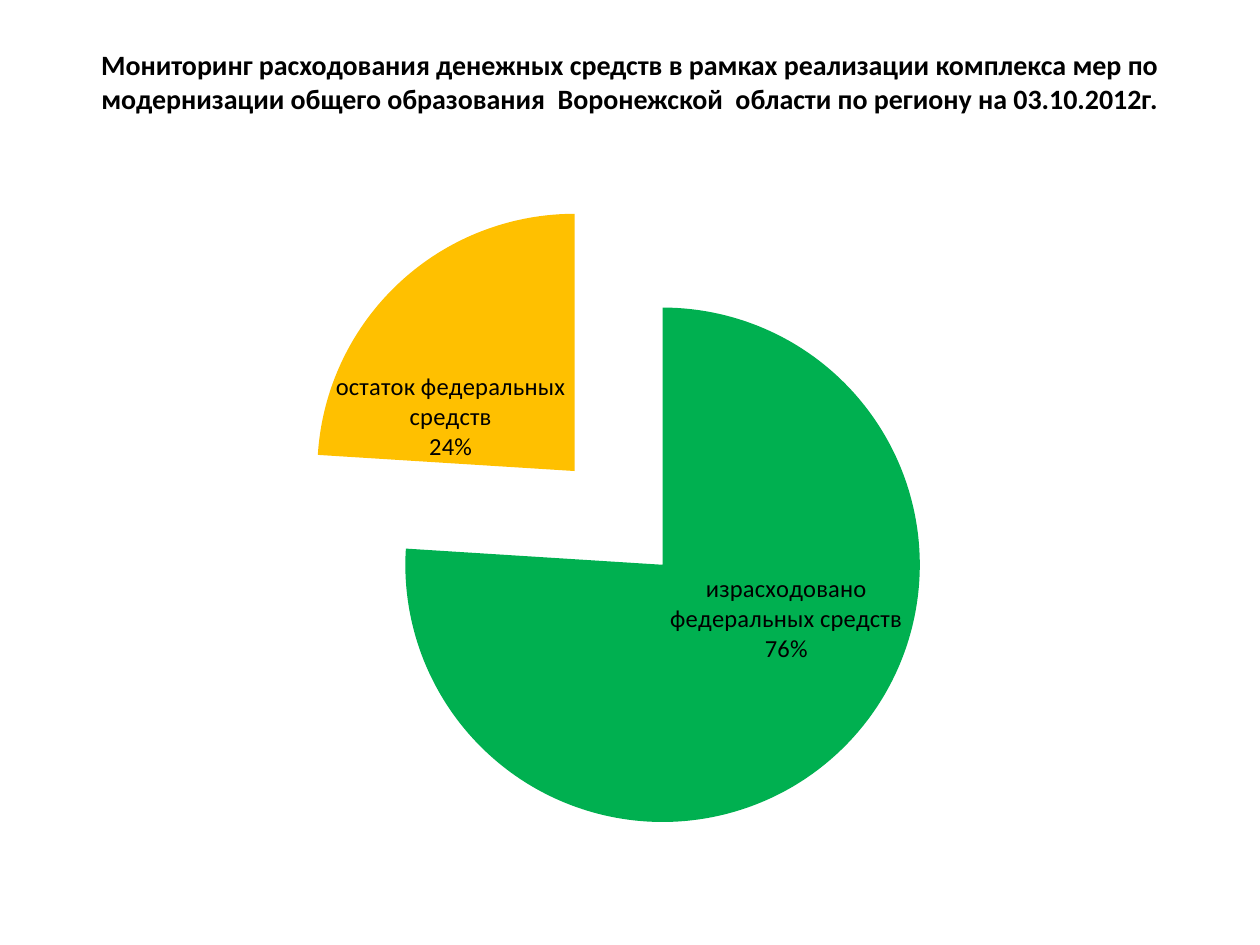
import pptx
import pptx.chart.data
import pptx.dml.color
import pptx.enum.chart
import pptx.enum.text
import pptx.oxml
import pptx.oxml.ns
import pptx.util

PX = 914400 // 126
WIDTH, HEIGHT = 1260, 945


class Theme:
    font = "Calibri"
    text = pptx.dml.color.RGBColor.from_string("000000")
    spent = pptx.dml.color.RGBColor.from_string("00B050")
    rest = pptx.dml.color.RGBColor.from_string("FFC000")
    title_size = pptx.util.Pt(16)
    chart_size = pptx.util.Pt(10)
    label_size = pptx.util.Pt(14)


def chart_xml(body):
    """Parse one chart element written with the c: prefix."""
    tag, rest = body[1:].split(" ", 1) if " " in body.split(">")[0] else body[1:].split(">", 1)
    gap = " " if " " in body.split(">")[0] else ">"
    ns = pptx.oxml.ns.nsdecls("c")
    return pptx.oxml.parse_xml(f"<{tag} {ns}{gap}{rest}")


def layout_xml(x, y, w=None, h=None):
    """Manual layout: an offset, or an inner plot area when a size is given."""
    items = []
    if w is not None:
        items += [("layoutTarget", "inner"), ("xMode", "edge"), ("yMode", "edge")]
    items += [("x", x), ("y", y)]
    if w is not None:
        items += [("w", w), ("h", h)]
    body = "".join(f'<c:{name} val="{value}"/>' for name, value in items)
    return chart_xml(f"<c:layout><c:manualLayout>{body}</c:manualLayout></c:layout>")


class Deck:
    def __init__(self, theme):
        self.theme = theme
        self.prs = pptx.Presentation()
        self.prs.slide_width = WIDTH * PX
        self.prs.slide_height = HEIGHT * PX
        self.slide = self.prs.slides.add_slide(self.prs.slide_layouts[6])

    def style(self, font, size, bold=False):
        font.name = self.theme.font
        font.size = size
        font.bold = bold
        font.color.rgb = self.theme.text

    def title(self, text, box):
        sp = self.slide.shapes.add_textbox(*(v * PX for v in box))
        tf = sp.text_frame
        tf.word_wrap = True
        tf.vertical_anchor = pptx.enum.text.MSO_ANCHOR.MIDDLE
        tf.text = text
        p = tf.paragraphs[0]
        p.alignment = pptx.enum.text.PP_ALIGN.CENTER
        self.style(p.runs[0].font, self.theme.title_size, bold=True)

    def pie(self, slices, box, plot, explosion):
        """Draw slices given as (category, value, colour, label offset)."""
        data = pptx.chart.data.CategoryChartData()
        data.categories = [category for category, *_ in slices]
        data.add_series("Series 1", [value for _, value, *_ in slices])
        kind = pptx.enum.chart.XL_CHART_TYPE.PIE
        chart = self.slide.shapes.add_chart(kind, *(v * PX for v in box), data).chart
        chart.has_legend = False
        chart.has_title = False
        self.style(chart.font, self.theme.chart_size)

        area = chart.plots[0]
        area.vary_by_categories = True
        plot_area = chart._chartSpace.chart.plotArea
        for old in plot_area.xpath("c:layout"):
            plot_area.remove(old)
        plot_area.insert(0, layout_xml(*plot))

        series = area.series[0]
        for i, (_, _, color, offset) in enumerate(slices):
            point = series.points[i]
            point.format.fill.solid()
            point.format.fill.fore_color.rgb = color
            self.label(point.data_label, offset)
        first_point = series._element.xpath("c:dPt")[0]
        first_point.addprevious(chart_xml(f'<c:explosion val="{explosion}"/>'))

        labels = series.data_labels
        labels.show_value = False
        labels.show_category_name = True
        labels.show_percentage = True
        self.style(labels.font, self.theme.label_size)

    def label(self, label, offset):
        """Show category over percentage, shifted by a share of the chart."""
        self.style(label.font, self.theme.label_size)
        label.position = pptx.enum.chart.XL_LABEL_POSITION.CENTER
        element = label._dLbl
        for name, value in (("showVal", 0), ("showCatName", 1), ("showPercent", 1)):
            element.xpath(f"c:{name}")[0].set("val", str(value))
        element.xpath("c:idx")[0].addnext(layout_xml(*offset))
        element.append(chart_xml("<c:separator>\n</c:separator>"))


def main():
    theme = Theme()
    deck = Deck(theme)
    deck.title(
        "Мониторинг расходования денежных средств в рамках реализации комплекса мер "
        "по модернизации общего образования  Воронежской  области по региону на 03.10.2012г.",
        (63, 27, 1134, 109),
    )
    deck.pie(
        [
            ("израсходовано федеральных средств", 76, theme.spent, (0.03, -0.05)),
            ("остаток федеральных средств", 24, theme.rest, (-0.03, 0.05)),
        ],
        box=(35, 125, 1191, 794),
        plot=(0.07, 0.09, 0.84, 0.81),
        explosion=25,
    )
    deck.prs.save("out.pptx")


if __name__ == "__main__":
    main()
